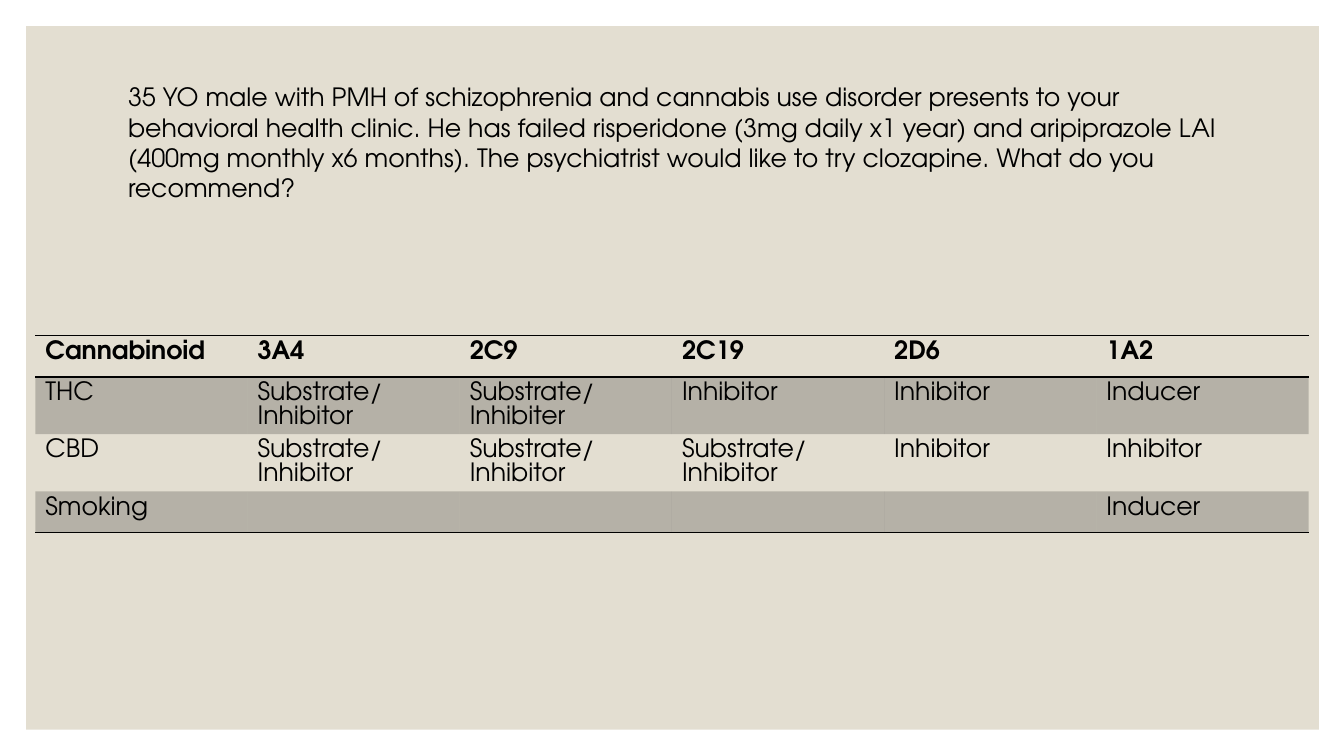
from pptx import Presentation
from pptx.dml.color import RGBColor
from pptx.enum.shapes import MSO_SHAPE
from pptx.enum.text import MSO_ANCHOR, PP_ALIGN
from pptx.oxml.ns import qn
from pptx.util import Inches, Pt
from lxml import etree

RECTANGLE = MSO_SHAPE.RECTANGLE
TOP = MSO_ANCHOR.TOP
LEFT = PP_ALIGN.LEFT
FONT = "TeX Gyre Adventor"
COLORS = {"panel": "E3DED1", "ink": "000000"}
NO_GRID_STYLE = "{2D5ABB26-0587-4C30-8999-92F81FD0307C}"
CASE = (
    "35 YO male with PMH of schizophrenia and cannabis use disorder presents to your "
    "behavioral health clinic. He has failed risperidone (3mg daily x1 year) and "
    "aripiprazole LAI (400mg monthly x6 months). The psychiatrist would like to try "
    "clozapine. What do you recommend?"
)
INTERACTIONS = [
    ["Cannabinoid", "3A4", "2C9", "2C19", "2D6", "1A2"],
    ["THC", "Substrate/ Inhibitor", "Substrate/ Inhibiter", "Inhibitor", "Inhibitor", "Inducer"],
    ["CBD", "Substrate/ Inhibitor", "Substrate/ Inhibitor", "Substrate/ Inhibitor",
     "Inhibitor", "Inhibitor"],
    ["Smoking", "", "", "", "", "Inducer"],
]


def color(name):
    return RGBColor.from_string(COLORS[name])


def format_text(para, bold=False):
    para.alignment = LEFT
    para.line_spacing = 1.0
    for font in [para.font] + [span.font for span in para.runs]:
        font.name = FONT
        font.size = Pt(18)
        font.bold = bold
        font.color.rgb = color("ink")


def add_panel(page):
    panel = page.shapes.add_shape(
        RECTANGLE, Inches(0.26), Inches(0.26), Inches(12.82), Inches(6.98))
    panel.shadow.inherit = False
    panel.fill.solid()
    panel.fill.fore_color.rgb = color("panel")
    panel.line.fill.background()
    page.shapes._spTree.insert(2, panel._element)


def fill_body(page):
    body = page.placeholders[1]
    body.left, body.top = Inches(1.17), Inches(0.76)
    body.width, body.height = Inches(11), Inches(4.3)
    frame = body.text_frame
    frame.text = CASE
    frame.word_wrap = True
    frame.vertical_anchor = TOP
    para = frame.paragraphs[0]
    format_text(para)
    para.space_before = Pt(9)
    properties = para._p.get_or_add_pPr()
    properties.set("marL", "0")
    properties.set("indent", "0")
    bullet = etree.Element(qn("a:buNone"))
    properties.find(qn("a:defRPr")).addprevious(bullet)


def add_border(cell, side):
    properties = cell._tc.get_or_add_tcPr()
    line = etree.Element(qn(f"a:{side}"), w=str(Pt(1)))
    fill = etree.SubElement(line, qn("a:solidFill"))
    etree.SubElement(fill, qn("a:srgbClr"), val=COLORS["ink"])
    properties.insert(len(properties.findall(qn("a:lnT"))), line)


def shade(cell):
    cell.fill.solid()
    cell.fill.fore_color.rgb = color("ink")
    tint = cell._tc.tcPr.find(".//" + qn("a:srgbClr"))
    etree.SubElement(tint, qn("a:alpha"), val="20000")


def add_interactions(page):
    rows, columns = len(INTERACTIONS), len(INTERACTIONS[0])
    frame = page.shapes.add_table(
        rows, columns, Inches(0.35), Inches(3.33), Inches(12.63), Inches(0.41 * rows))
    table = frame.table
    table._tbl.tblPr.find(qn("a:tableStyleId")).text = NO_GRID_STYLE
    for r, texts in enumerate(INTERACTIONS):
        for c, text in enumerate(texts):
            cell = table.cell(r, c)
            cell.text = text
            format_text(cell.text_frame.paragraphs[0], bold=r == 0)
            if r % 2:
                shade(cell)
            else:
                cell.fill.background()
            if r == 0:
                add_border(cell, "lnT")
            if r in (0, rows - 1):
                add_border(cell, "lnB")


def main():
    deck = Presentation()
    deck.slide_width, deck.slide_height = Inches(13.33), Inches(7.5)
    page = deck.slides.add_slide(deck.slide_layouts[1])
    title = page.shapes.title._element
    title.getparent().remove(title)
    add_panel(page)
    fill_body(page)
    add_interactions(page)
    deck.save("out.pptx")


if __name__ == "__main__":
    main()
